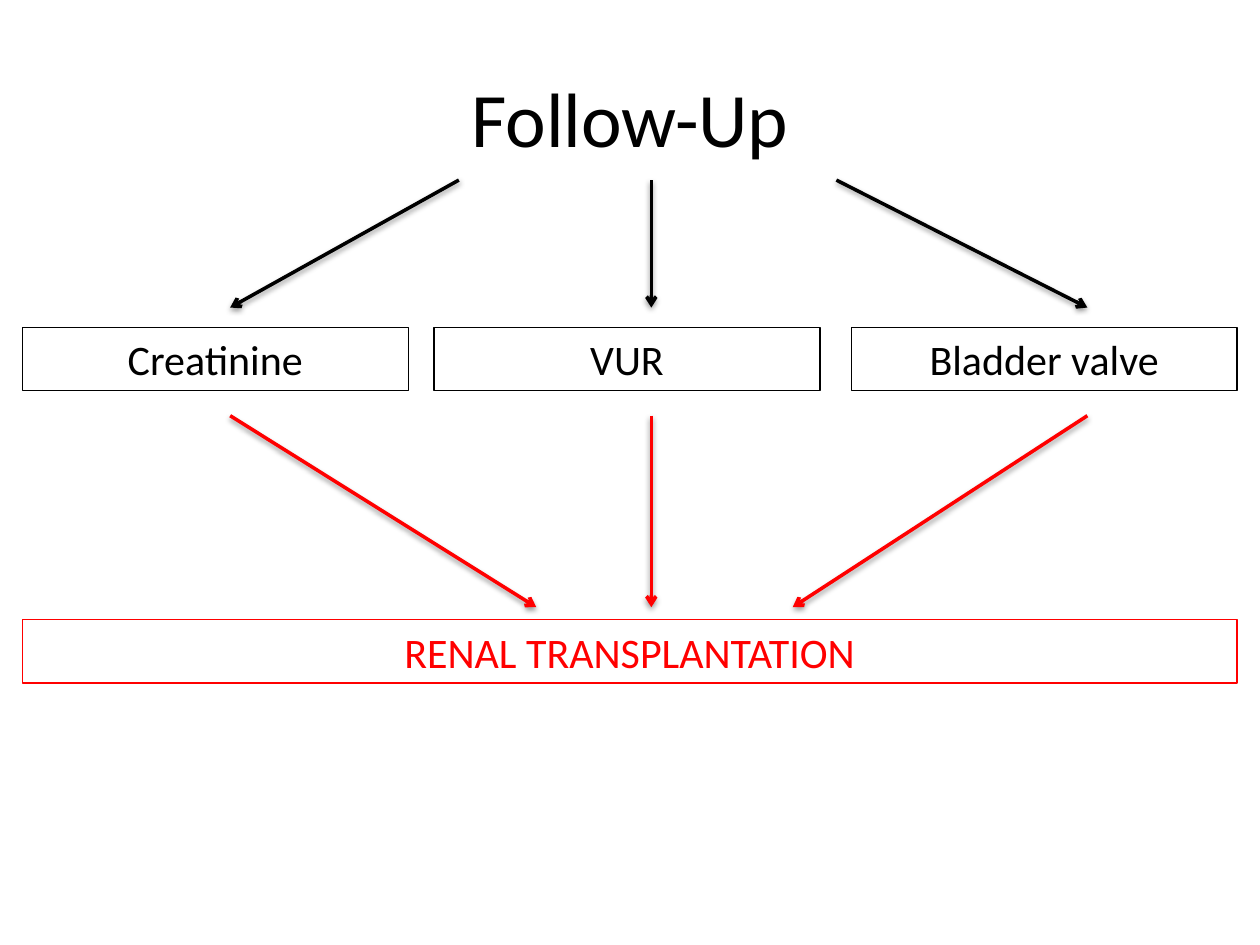
from lxml import etree
from pptx import Presentation
from pptx.dml.color import RGBColor
from pptx.enum.shapes import MSO_CONNECTOR, MSO_SHAPE
from pptx.enum.text import MSO_ANCHOR, MSO_AUTO_SIZE, PP_ALIGN
from pptx.oxml import parse_xml
from pptx.oxml.ns import qn
from pptx.util import Cm, Pt

RECT = MSO_SHAPE.RECTANGLE
STRAIGHT = MSO_CONNECTOR.STRAIGHT
CENTER = PP_ALIGN.CENTER
MIDDLE = MSO_ANCHOR.MIDDLE
GROW = MSO_AUTO_SIZE.SHAPE_TO_FIT_TEXT

BLACK, RED = "000000", "FF0000"
SHADOW = (
    '<a:effectLst xmlns:a="http://schemas.openxmlformats.org/drawingml/2006/main">'
    '<a:outerShdw blurRad="40000" dist="20000" dir="5400000" rotWithShape="0">'
    '<a:srgbClr val="000000"><a:alpha val="38000"/></a:srgbClr>'
    '</a:outerShdw></a:effectLst>'
)


def rgb(color):
    return RGBColor.from_string(color)


class Diagram:
    font = "Calibri"
    title_size, box_size = Pt(44), Pt(24)
    box_line, arrow_line = Pt(0.75), Pt(2)

    def __init__(self, slide):
        self.slide = slide

    def add_text(self, sp, text, size, color):
        tf = sp.text_frame
        tf.word_wrap = True
        tf.vertical_anchor = MIDDLE
        p = tf.paragraphs[0]
        p.alignment = CENTER
        r = p.add_run()
        r.text = text
        r.font.name = self.font
        r.font.size = size
        r.font.color.rgb = rgb(color)

    def title(self, text, x, y, w, h):
        sp = self.slide.shapes.add_textbox(Cm(x), Cm(y), Cm(w), Cm(h))
        self.add_text(sp, text, self.title_size, BLACK)

    def box(self, text, x, y, w, h, color=BLACK):
        sp = self.slide.shapes.add_shape(RECT, Cm(x), Cm(y), Cm(w), Cm(h))
        sp.shadow.inherit = False
        sp.fill.background()
        sp.line.color.rgb = rgb(color)
        sp.line.width = self.box_line
        self.add_text(sp, text, self.box_size, color)
        sp.text_frame.auto_size = GROW

    def arrow(self, x1, y1, x2, y2, color):
        sp = self.slide.shapes.add_connector(
            STRAIGHT, Cm(x1), Cm(y1), Cm(x2), Cm(y2))
        sp.line.color.rgb = rgb(color)
        sp.line.width = self.arrow_line
        ln = sp.get_or_add_ln()
        etree.SubElement(ln, qn("a:tailEnd"), type="arrow")
        ln.addnext(parse_xml(SHADOW))


def main():
    prs = Presentation()
    prs.slide_width, prs.slide_height = Cm(25.4), Cm(19.05)
    s = prs.slides.add_slide(prs.slide_layouts[6])
    d = Diagram(s)

    # Title
    d.title("Follow-Up", 1.27, 0.76, 22.86, 3.18)

    # Follow-up items and their common outcome
    items = [("Creatinine", 0.45), ("VUR", 8.75), ("Bladder valve", 17.16)]
    for text, x in items:
        d.box(text, x, 6.6, 7.78, 1.28)
    d.box("RENAL TRANSPLANTATION", 0.45, 12.49, 24.49, 1.28, RED)

    # Arrows: from the title to each item, then on to the outcome
    routes = [(9.25, 4.64, 10.81), (13.13, 13.13, 13.13), (16.86, 21.92, 15.98)]
    for start, item, end in routes:
        d.arrow(start, 3.63, item, 6.2, BLACK)
        d.arrow(item, 8.38, end, 12.24, RED)

    prs.save("out.pptx")


if __name__ == "__main__":
    main()
